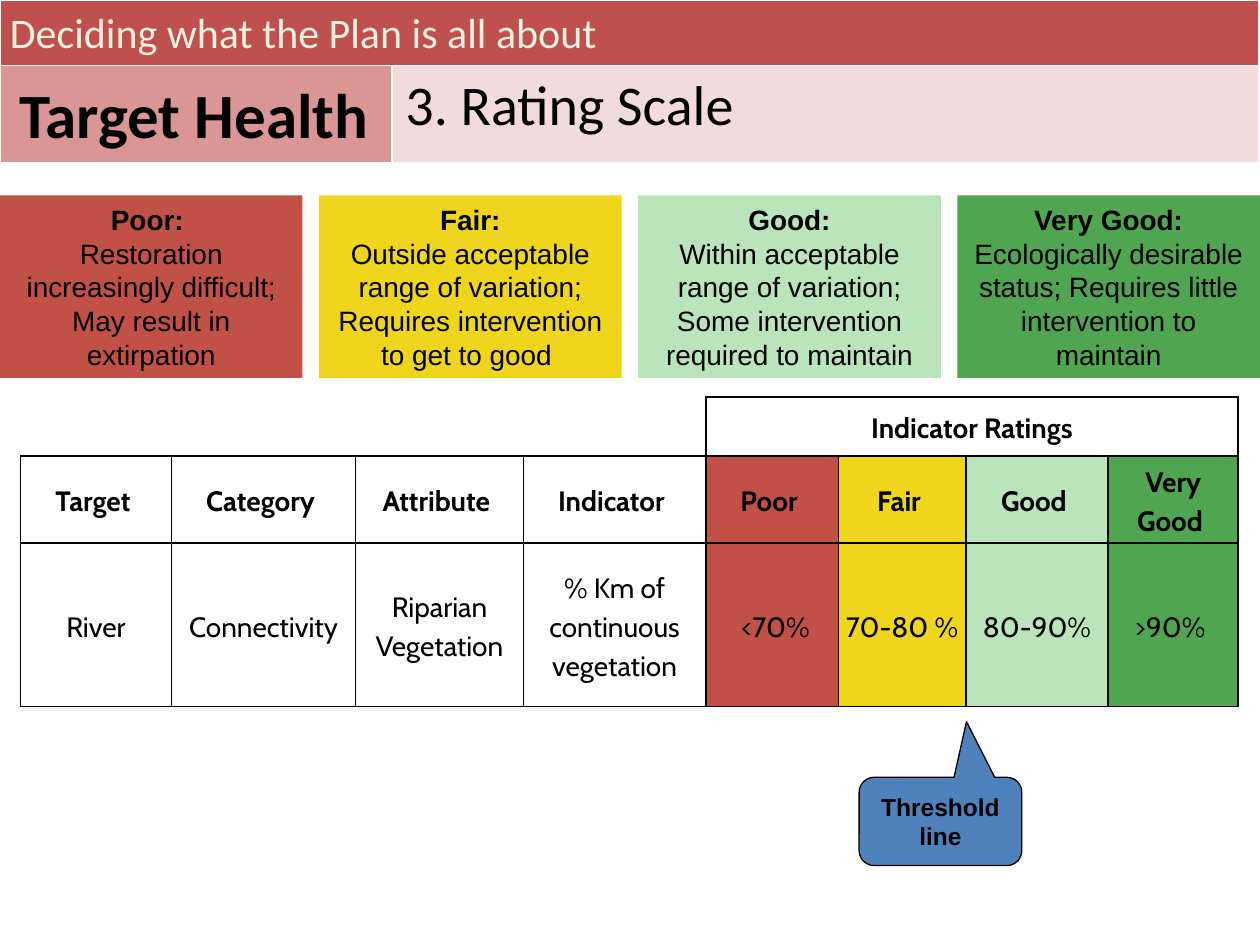
from lxml.etree import SubElement
from pptx import Presentation
from pptx.dml.color import RGBColor
from pptx.enum.shapes import MSO_SHAPE
from pptx.enum.text import MSO_ANCHOR, MSO_AUTO_SIZE, PP_ALIGN
from pptx.oxml.ns import qn
from pptx.util import Cm, Pt

BLACK = RGBColor(0x00, 0x00, 0x00)
WHITE = RGBColor(0xFF, 0xFF, 0xFF)
CREAM = RGBColor(0xEB, 0xF1, 0xDE)
BRICK = RGBColor(0xC0, 0x50, 0x4D)
ROSE = RGBColor(0xD9, 0x96, 0x94)
BLUSH = RGBColor(0xF2, 0xDC, 0xDB)
BLUE = RGBColor(0x4F, 0x81, 0xBD)
POOR = RGBColor(0xC1, 0x50, 0x46)
FAIR = RGBColor(0xEF, 0xD6, 0x1D)
GOOD = RGBColor(0xBA, 0xE5, 0xBA)
VERY_GOOD = RGBColor(0x50, 0xA5, 0x50)
RATINGS = [POOR, FAIR, GOOD, VERY_GOOD]


def write(tf, paragraphs, font="Arial", size=16, color=BLACK, align=PP_ALIGN.CENTER,
          anchor=MSO_ANCHOR.MIDDLE, spacing=None, after=None):
    tf.word_wrap = True
    tf.vertical_anchor = anchor
    for i, runs in enumerate(paragraphs):
        p = tf.add_paragraph() if i else tf.paragraphs[0]
        p.alignment = align
        if spacing:
            p.line_spacing = spacing
        if after:
            p.space_after = Pt(after)
        for text, bold in runs:
            r = p.add_run()
            r.text = text
            r.font.name = font
            r.font.size = Pt(size)
            r.font.bold = bold
            r.font.color.rgb = color


class Deck:
    heading = {"font": "Calibri", "anchor": MSO_ANCHOR.TOP}
    cell_text = {"font": "Cabin", "spacing": 1.15, "after": 3.9}

    def __init__(self, prs):
        self.s = prs.slides.add_slide(prs.slide_layouts[5])

    def title(self, text, box, **fmt):
        sp = self.s.shapes.title
        sp.left, sp.top, sp.width, sp.height = map(Cm, box)
        sp.text_frame.auto_size = MSO_AUTO_SIZE.NONE
        write(sp.text_frame, [[(text, False)]], **self.heading, **fmt)

    def label(self, text, box, bold=False, **fmt):
        sp = self.s.shapes.add_textbox(*map(Cm, box))
        write(sp.text_frame, [[(text, bold)]], **self.heading, **fmt)

    def block(self, shape, box, fill, paragraphs, line=None, **fmt):
        sp = self.s.shapes.add_shape(shape, *map(Cm, box))
        sp.shadow.inherit = False
        sp.fill.solid()
        sp.fill.fore_color.rgb = fill
        if line is None:
            sp.line.fill.background()
        else:
            sp.line.color.rgb = line
            sp.line.width = Pt(0.75)
        write(sp.text_frame, paragraphs, **fmt)
        return sp

    def table(self, left, top, cols, rows):
        frame = self.s.shapes.add_table(len(rows), len(cols), Cm(left), Cm(top),
                                        Cm(sum(cols)), Cm(sum(rows)))
        table = frame.table
        table.first_row = table.horz_banding = False
        for col, width in zip(table.columns, cols):
            col.width = Cm(width)
        for row, height in zip(table.rows, rows):
            row.height = Cm(height)
        return frame

    def cell(self, cell, fill=None, border=BLACK, sides="LRTB", text="", bold=False):
        tc_pr = cell._tc.get_or_add_tcPr()
        for side in sides:
            ln = SubElement(tc_pr, qn(f"a:ln{side}"), w=str(Pt(1)))
            solid = SubElement(ln, qn("a:solidFill"))
            SubElement(solid, qn("a:srgbClr"), val=str(border))
        if fill is None:
            cell.fill.background()
        else:
            cell.fill.solid()
            cell.fill.fore_color.rgb = fill
        cell.margin_left = cell.margin_right = Cm(0.15)
        cell.margin_top = cell.margin_bottom = Cm(0.1)
        if text:
            write(cell.text_frame, [[(text, bold)]], **self.cell_text)
            cell.vertical_anchor = MSO_ANCHOR.MIDDLE


def add_header(deck):
    frame = deck.table(0, 0, [7.9, 17.48], [1.32, 1.96])
    deck.s.shapes.title.element.addprevious(frame.element)
    table = frame.table
    table.cell(0, 0).merge(table.cell(0, 1))
    for r, fills in enumerate([(BRICK, BRICK), (ROSE, BLUSH)]):
        for c, fill in enumerate(fills):
            deck.cell(table.cell(r, c), fill, WHITE)
    deck.title("3. Rating Scale", (7.92, 1.27, 17.48, 1.9), size=32, align=PP_ALIGN.LEFT)
    deck.label("Deciding what the Plan is all about", (-0.05, 0, 25.35, 1.3),
               size=24, color=CREAM, align=PP_ALIGN.LEFT)
    deck.label("Target Health ", (0, 1.4, 7.82, 1.8), bold=True, size=36)


def add_cards(deck):
    cards = [
        [[("Poor: ", True)],
         [("Restoration increasingly difficult; May result in extirpation", False)]],
        [[("Fair:", True)],
         [("Outside acceptable range of variation; Requires intervention to get to good ", False)]],
        [[("Good:", True)],
         [("Within acceptable range of variation; Some intervention required to maintain", False)]],
        [[("Very Good: ", True),
          ("Ecologically desirable status; Requires little intervention to maintain", False)]],
    ]
    width = 6.1
    pitch = (25.4 - width) / 3
    for i, (paragraphs, fill) in enumerate(zip(cards, RATINGS)):
        deck.block(MSO_SHAPE.RECTANGLE, (i * pitch, 3.94, width, 3.68), fill, paragraphs)


def add_ratings(deck):
    table = deck.table(0.41, 8, [3.05, 3.71, 3.38, 3.68, 2.67, 2.57, 2.87, 2.62],
                       [1.19, 1.73, 3.3]).table
    table.cell(0, 4).merge(table.cell(0, 7))
    for c in range(8):
        sides = "LRTB" if c > 3 else "RB" if c == 3 else "B"
        deck.cell(table.cell(0, c), sides=sides,
                  text="Indicator Ratings" if c == 4 else "", bold=True)
    body = [
        ["Target ", "Category ", "Attribute ", "Indicator ",
         "Poor ", "Fair ", "Good ", "Very Good "],
        ["River", "Connectivity", "Riparian Vegetation", "% Km of continuous vegetation",
         " <70%", "70-80 %", "80-90%", ">90% "],
    ]
    for r, texts in enumerate(body, 1):
        for c, (text, fill) in enumerate(zip(texts, [None] * 4 + RATINGS)):
            deck.cell(table.cell(r, c), fill, text=text, bold=r == 1)


def add_threshold(deck):
    sp = deck.block(MSO_SHAPE.ROUNDED_RECTANGULAR_CALLOUT, (17.32, 15.67, 3.28, 1.78), BLUE,
                    [[("Threshold line", True)]], line=BLACK, size=14)
    for i, value in enumerate([0.16, -1.13, 0.17]):
        sp.adjustments[i] = value


def main():
    prs = Presentation()
    prs.slide_width, prs.slide_height = Cm(25.4), Cm(19.05)
    deck = Deck(prs)
    add_header(deck)
    add_ratings(deck)
    add_cards(deck)
    add_threshold(deck)
    prs.save("out.pptx")


if __name__ == "__main__":
    main()
